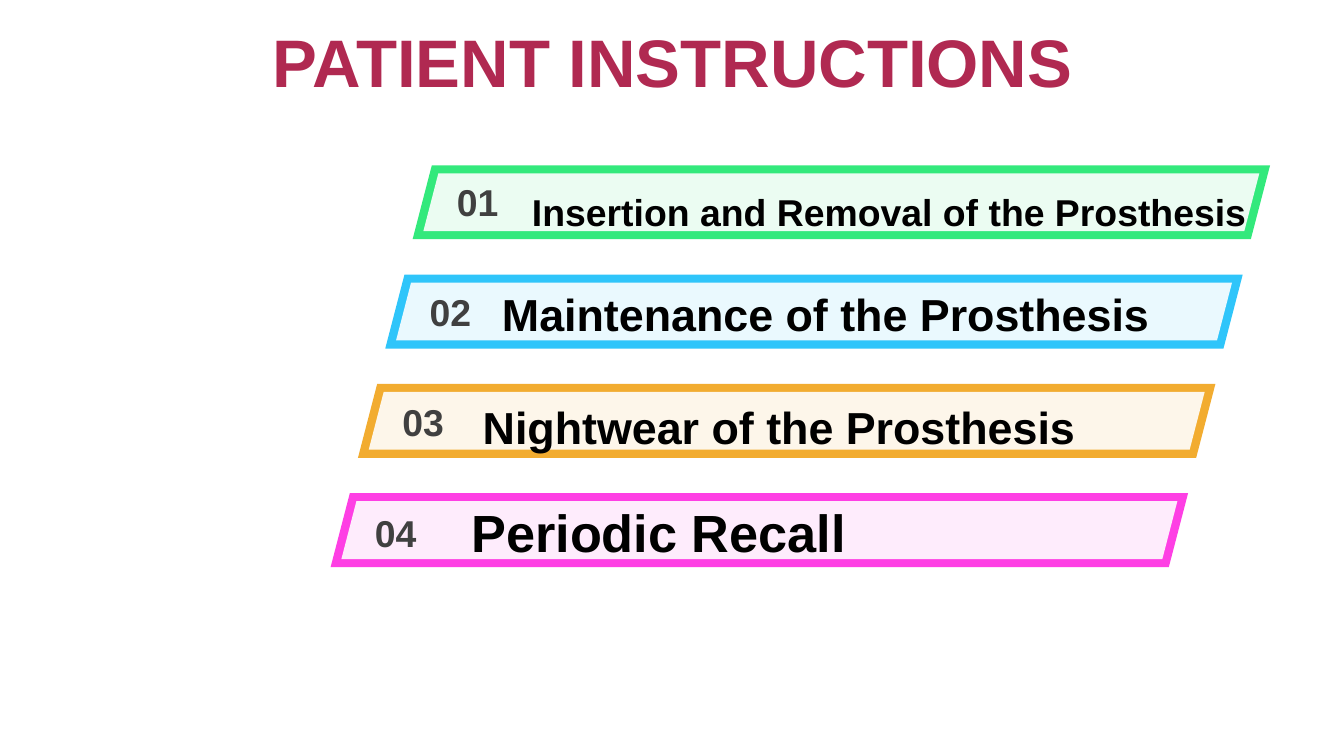
from dataclasses import dataclass
from lxml import etree
from pptx import Presentation
from pptx.dml.color import RGBColor
from pptx.enum.shapes import MSO_SHAPE
from pptx.enum.text import MSO_ANCHOR, MSO_AUTO_SIZE, PP_ALIGN
from pptx.oxml.ns import qn
from pptx.util import Inches, Pt

PARALLELOGRAM = MSO_SHAPE.PARALLELOGRAM
TOP, MIDDLE = MSO_ANCHOR.TOP, MSO_ANCHOR.MIDDLE
LEFT, CENTER = PP_ALIGN.LEFT, PP_ALIGN.CENTER
NO_FIT = MSO_AUTO_SIZE.NONE


@dataclass(frozen=True)
class Theme:
    font: str = "Arial"
    title: str = "B02951"
    number: str = "404040"
    label: str = "000000"
    panel: str = "FFFFFF"
    panel_opacity: int = 90
    title_size: int = 36
    number_size: int = 20


THEME = Theme()
TITLE = "PATIENT INSTRUCTIONS"
INSTRUCTIONS = [
    dict(label="Insertion and Removal of the Prosthesis", color="33E97C",
         size=20, offset=(0.79, 0.13), width=5.61, height=0.44),
    dict(label="Maintenance of the Prosthesis", color="2FC5FA",
         size=24, offset=(0.77, 0.04), width=5.13, height=0.5),
    dict(label="Nightwear of the Prosthesis", color="F2AC30",
         size=24, offset=(0.83, 0.07), width=5.13, height=0.5),
    dict(label="Periodic Recall", color="FE3FE4",
         size=28, offset=(0.95, 0), width=5.13, height=0.57),
]

SLIDE_W = 10
SLIDE_H = SLIDE_W * 9 / 16
FIRST_BAR, LAST_BAR = (3.07, 1.23), (2.46, 3.67)
BAR_W, BAR_H = 6.38, 0.55
BORDER_X, BORDER_Y = 0.08, 0.06
SLANT = 0.26
FIRST_NUMBER, LAST_NUMBER = (3.29, 1.25), (2.68, 3.71)
NUMBER_W, NUMBER_H = 0.53, 0.5


def write(holder, text, *, size, color, align=LEFT, anchor=TOP,
          margin=None, space_before=0):
    frame = holder.text_frame
    frame.word_wrap = True
    frame.auto_size = NO_FIT
    frame.vertical_anchor = anchor
    if margin is not None:
        frame.margin_left = frame.margin_right = Inches(margin)
        frame.margin_top = frame.margin_bottom = Inches(margin)
    paragraph = frame.paragraphs[0]
    paragraph.alignment = align
    paragraph.space_before = Pt(space_before)
    run = paragraph.add_run()
    run.text = text
    run.font.name = THEME.font
    run.font.size = Pt(size)
    run.font.bold = True
    run.font.color.rgb = RGBColor.from_string(color)


def add_slanted(slide, left, top, width, height, color, opacity=100):
    band = slide.shapes.add_shape(
        PARALLELOGRAM, *map(Inches, (left, top, width, height)))
    band.adjustments[0] = SLANT
    band.shadow.inherit = False
    band.line.fill.background()
    band.fill.solid()
    band.fill.fore_color.rgb = RGBColor.from_string(color)
    if opacity < 100:
        tint = band.element.spPr.find(qn("a:solidFill"))[0]
        etree.SubElement(tint, qn("a:alpha")).set("val", str(opacity * 1000))


def add_text(slide, left, top, width, height, text, **style):
    box = slide.shapes.add_textbox(*map(Inches, (left, top, width, height)))
    write(box, text, **style)


def between(first, last, share):
    return [a + (b - a) * share for a, b in zip(first, last)]


def add_instruction(slide, index, item):
    share = index / (len(INSTRUCTIONS) - 1)
    left, top = between(FIRST_BAR, LAST_BAR, share)
    add_slanted(slide, left, top, BAR_W, BAR_H, item["color"])
    add_slanted(slide, left + BORDER_X, top + BORDER_Y,
                BAR_W - 2 * BORDER_X, BAR_H - 2 * BORDER_Y,
                THEME.panel, THEME.panel_opacity)
    add_text(slide, *between(FIRST_NUMBER, LAST_NUMBER, share),
             NUMBER_W, NUMBER_H, f"{index + 1:02}",
             size=THEME.number_size, color=THEME.number,
             align=CENTER, anchor=MIDDLE, margin=0, space_before=4)
    add_text(slide, left + item["offset"][0], top + item["offset"][1],
             item["width"], item["height"], item["label"],
             size=item["size"], color=THEME.label)


def main():
    deck = Presentation()
    deck.slide_width, deck.slide_height = Inches(SLIDE_W), Inches(SLIDE_H)
    slide = deck.slides.add_slide(deck.slide_layouts.get_by_name("Title Only"))
    heading = slide.shapes.title
    heading.left, heading.top = Inches(1.93), Inches(0.03)
    heading.width, heading.height = Inches(8.07), Inches(0.85)
    write(heading, TITLE, size=THEME.title_size, color=THEME.title,
          anchor=MIDDLE)
    for index, item in enumerate(INSTRUCTIONS):
        add_instruction(slide, index, item)
    deck.save("out.pptx")


if __name__ == "__main__":
    main()
